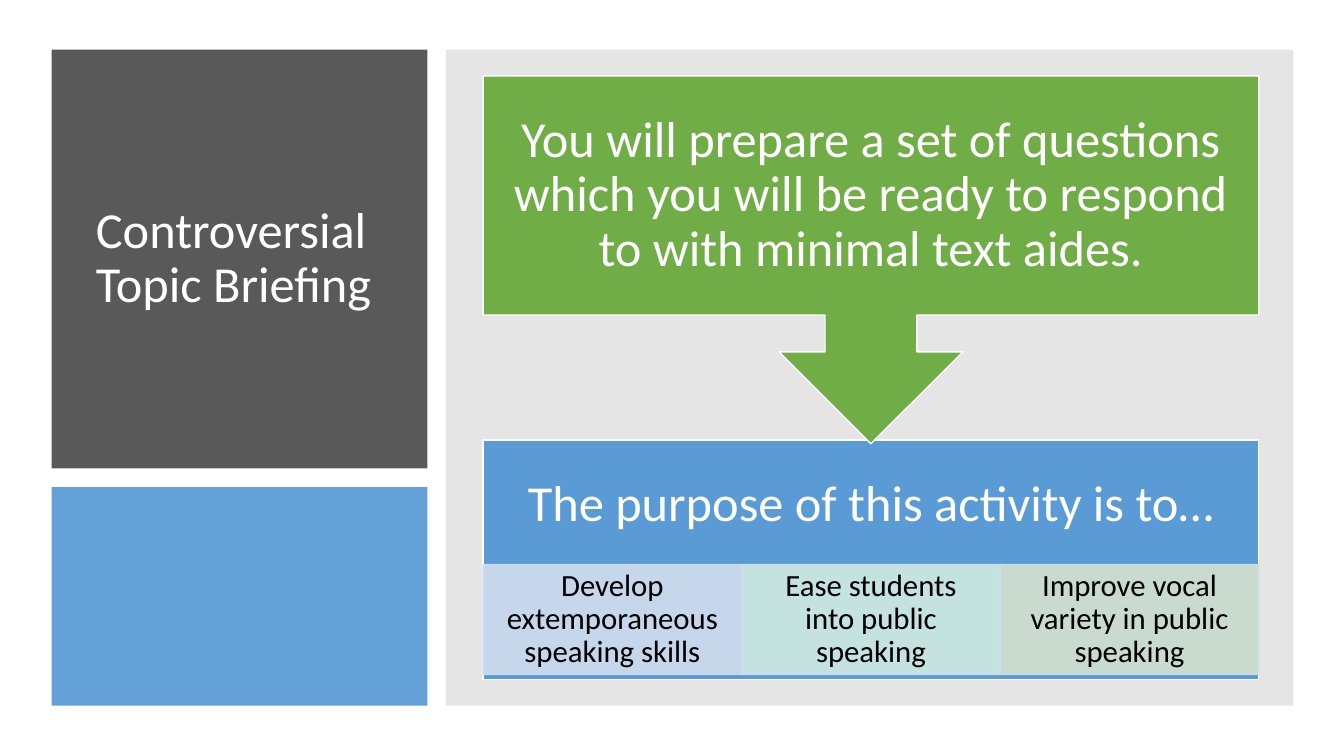
"""Build the Controversial Topic Briefing slide."""
from lxml import etree
from pptx import Presentation
from pptx.dml.color import RGBColor
from pptx.enum.shapes import MSO_SHAPE
from pptx.enum.text import MSO_ANCHOR, PP_ALIGN
from pptx.oxml.ns import qn
from pptx.util import Pt

RECT = MSO_SHAPE.RECTANGLE
CALLOUT = MSO_SHAPE.UP_ARROW_CALLOUT
MIDDLE = MSO_ANCHOR.MIDDLE
CENTER, JUSTIFY = PP_ALIGN.CENTER, PP_ALIGN.JUSTIFY

WHITE = RGBColor(0xFF, 0xFF, 0xFF)
BLACK = RGBColor(0, 0, 0)
DARK = RGBColor(0x59, 0x59, 0x59)
GRAY = RGBColor(0x80, 0x80, 0x80)
BLUE = RGBColor(0x5B, 0x9B, 0xD5)
GREEN = RGBColor(0x70, 0xAD, 0x47)
PALE = RGBColor(0xD2, 0xDE, 0xEF)
MINT = RGBColor(0xD0, 0xEA, 0xE1)
SAGE = RGBColor(0xD5, 0xE3, 0xCF)

TITLE = "Controversial Topic Briefing"
TASK = ("You will prepare a set of questions which you will be ready "
        "to respond to with minimal text aides.")
PURPOSE = "The purpose of this activity is to…"
GOALS = [
    ("Develop extemporaneous speaking skills", PALE),
    ("Ease students into public speaking", MINT),
    ("Improve vocal variety in public speaking", SAGE),
]
FONT = "Calibri"
BIG, SMALL = 36, 22

LEFT, TOP, BOTTOM = 36.9, 35.4, 504
SIDE_W, DARK_H, BLUE_TOP = 268.4, 299.2, 347.9
PANEL_X, PANEL_W = 318.5, 605.4
FLOW_X, FLOW_W = 345.1, 554
TASK_Y, ARROW_H = 54.2, 262.8
BOX_H, BOX_Y, HEAD_H = 170.8, 314.4, 92.2
GOAL_Y, GOAL_H = 403.2, 78.5


def fade(fill, alpha):
    """Set the opacity, in percent, of a solid fill."""
    color = fill._xPr.find(qn("a:solidFill"))[0]
    etree.SubElement(color, qn("a:alpha"), val=str(alpha * 1000))


def shape(slide, kind, box, fill, line=None, alpha=100):
    """Add a filled shape."""
    item = slide.shapes.add_shape(kind, *map(Pt, box))
    item.shadow.inherit = False
    item.fill.solid()
    item.fill.fore_color.rgb = fill
    if line is None:
        item.line.fill.background()
    else:
        item.line.color.rgb = line
        item.line.width = Pt(1)
    if alpha < 100:
        fade(item.fill, alpha)
        if line is not None:
            fade(item.line.fill, alpha)
    return item


def write(item, words, size, color, align, pad_x, pad_y):
    """Write one paragraph into a shape or text box."""
    frame = item.text_frame
    frame.word_wrap = True
    frame.vertical_anchor = MIDDLE
    frame.margin_left = frame.margin_right = Pt(pad_x)
    frame.margin_top = frame.margin_bottom = Pt(pad_y)
    para = frame.paragraphs[0]
    para.alignment = align
    para.line_spacing = 0.9
    run = para.add_run()
    run.text = words
    run.font.name = FONT
    run.font.size = Pt(size)
    run.font.color.rgb = color


def label(slide, box, words, align, pad_x, pad_y):
    """Add a text box in large white type."""
    item = slide.shapes.add_textbox(*map(Pt, box))
    write(item, words, BIG, WHITE, align, pad_x, pad_y)


def main():
    """Draw the slide and save it."""
    deck = Presentation()
    deck.slide_width, deck.slide_height = Pt(960), Pt(540)
    slide = deck.slides.add_slide(deck.slide_layouts[6])

    shape(slide, RECT, (LEFT, TOP, SIDE_W, DARK_H), DARK)
    label(slide, (61.4, 57.6, 223.9, 254.9), TITLE, JUSTIFY, 7.2, 3.6)
    shape(slide, RECT, (LEFT, BLUE_TOP, SIDE_W, BOTTOM - BLUE_TOP), BLUE, alpha=95)
    shape(slide, RECT, (PANEL_X, TOP, PANEL_W, BOTTOM - TOP), GRAY, alpha=20)

    shape(slide, RECT, (FLOW_X, BOX_Y, FLOW_W, BOX_H), BLUE, WHITE)
    label(slide, (FLOW_X, BOX_Y, FLOW_W, HEAD_H), PURPOSE, CENTER, 20.16, 20.16)

    goal_w = FLOW_W / len(GOALS)
    for i, (words, fill) in enumerate(GOALS):
        box = (FLOW_X + i * goal_w, GOAL_Y, goal_w, GOAL_H)
        tile = shape(slide, RECT, box, fill, PALE, 90)
        write(tile, words, SMALL, BLACK, CENTER, 12.3, 2.2)

    arrow = shape(slide, CALLOUT, (FLOW_X, TASK_Y, FLOW_W, ARROW_H), GREEN, WHITE)
    arrow.rotation = 180
    label(slide, (FLOW_X, TASK_Y, FLOW_W, BOX_H), TASK, CENTER, 20.16, 20.16)

    deck.save("out.pptx")


if __name__ == "__main__":
    main()
